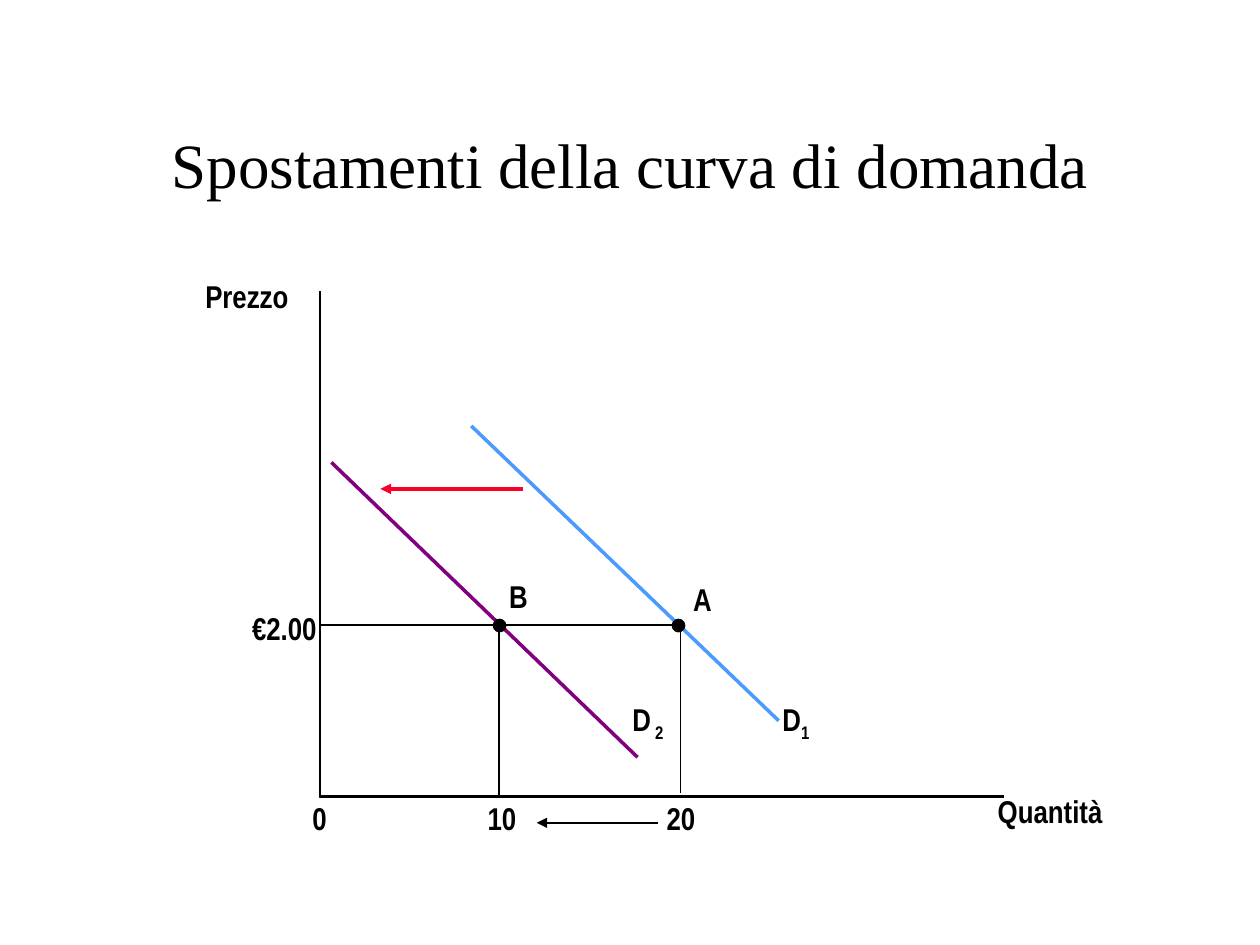
from lxml.etree import SubElement
from pptx import Presentation
from pptx.dml.color import RGBColor
from pptx.enum.shapes import MSO_CONNECTOR as Connector, MSO_SHAPE as Shape
from pptx.enum.text import MSO_ANCHOR as Anchor, MSO_AUTO_SIZE as AutoSize, PP_ALIGN as Align
from pptx.oxml.ns import qn
from pptx.util import Inches, Pt

BLACK = RGBColor(0x00, 0x00, 0x00)
BLUE = RGBColor(0x4D, 0x9A, 0xFF)
PURPLE = RGBColor(0x80, 0x00, 0x80)
RED = RGBColor(0xFC, 0x01, 0x28)

presentation = Presentation()
presentation.slide_width = Inches(10)
presentation.slide_height = Inches(7.5)
slide = presentation.slides.add_slide(presentation.slide_layouts[5])
shapes = slide.shapes


def add_label(text, left, top, width, height=0.3, subscript="", align=Align.LEFT,
              spacing=1.0, wrap=False):
    box = shapes.add_textbox(Inches(left), Inches(top), Inches(width), Inches(height))
    frame = box.text_frame
    frame.margin_left = frame.margin_right = frame.margin_top = frame.margin_bottom = 0
    frame.word_wrap = wrap
    frame.auto_size = AutoSize.SHAPE_TO_FIT_TEXT
    paragraph = frame.paragraphs[0]
    paragraph.alignment = align
    paragraph.line_spacing = spacing
    for part in filter(None, (text, subscript)):
        run = paragraph.add_run()
        run.text = part
        run.font.name = "Arial Narrow"
        run.font.size = Pt(18)
        run.font.bold = True
        run.font.color.rgb = BLACK
    if subscript:
        run.font._element.set("baseline", "-25000")


def add_line(start, end, color=BLACK, width=1, arrow=False):
    line = shapes.add_connector(Connector.STRAIGHT, *map(Inches, start + end))
    line.line.color.rgb = color
    line.line.width = Pt(width)
    SubElement(line._element.spPr, qn("a:effectLst"))
    if arrow:
        SubElement(line.line._get_or_add_ln(), qn("a:headEnd"), type="triangle")


title = shapes.title
title.left, title.top = Inches(0.75), Inches(0.67)
title.width, title.height = Inches(8.5), Inches(1.25)
title.text_frame.text = "Spostamenti della curva di domanda"
title.text_frame.vertical_anchor = Anchor.MIDDLE
paragraph = title.text_frame.paragraphs[0]
paragraph.alignment = Align.CENTER
paragraph.font.name = "Times New Roman"
paragraph.font.size = Pt(36)
paragraph.font.color.rgb = BLACK

add_label("Prezzo", 1.59, 2.26, 0.7, 0.24, align=Align.RIGHT, spacing=0.8)
add_label("Quantità", 7.85, 6.33, 0.9, 0.51, align=Align.RIGHT, spacing=0.85, wrap=True)

for baseline in (6.33, 6.32):
    builder = shapes.build_freeform(Inches(2.54), Inches(2.31))
    builder.add_line_segments(
        [(Inches(2.54), Inches(baseline)), (Inches(7.97), Inches(baseline))], close=False)
    axes = builder.convert_to_shape()
    axes.shadow.inherit = False
    axes.fill.background()
    axes.line.color.rgb = BLACK
    axes.line.width = Pt(1)

add_line((6.18, 5.72), (3.74, 3.38), BLUE, 2)
add_line((5.06, 6.01), (2.63, 3.67), PURPLE, 2)
add_line((3.02, 3.88), (4.15, 3.88), RED, 2, arrow=True)

add_label("D", 5.02, 5.56, 0.26, subscript=" 2")
add_label("D", 6.21, 5.56, 0.22, subscript="1")
for text, left, top, width in (
    ("0", 2.48, 6.34, 0.11),
    ("10", 3.87, 6.34, 0.23),
    ("20", 5.29, 6.34, 0.23),
    ("€2.00", 2, 4.83, 0.52),
    ("B", 4.04, 4.58, 0.15),
    ("A", 5.5, 4.6, 0.15),
):
    add_label(text, left, top, width)

add_line((2.55, 4.96), (5.37, 4.96))
add_line((3.96, 4.97), (3.96, 6.31))
add_line((5.4, 4.97), (5.4, 6.29))

for left in (3.91, 5.33):
    point = shapes.add_shape(Shape.OVAL, Inches(left), Inches(4.91), Inches(0.11), Inches(0.11))
    point.shadow.inherit = False
    point.fill.solid()
    point.fill.fore_color.rgb = BLACK
    point.line.fill.background()

add_line((4.26, 6.53), (5.22, 6.53), arrow=True)

presentation.save("out.pptx")
